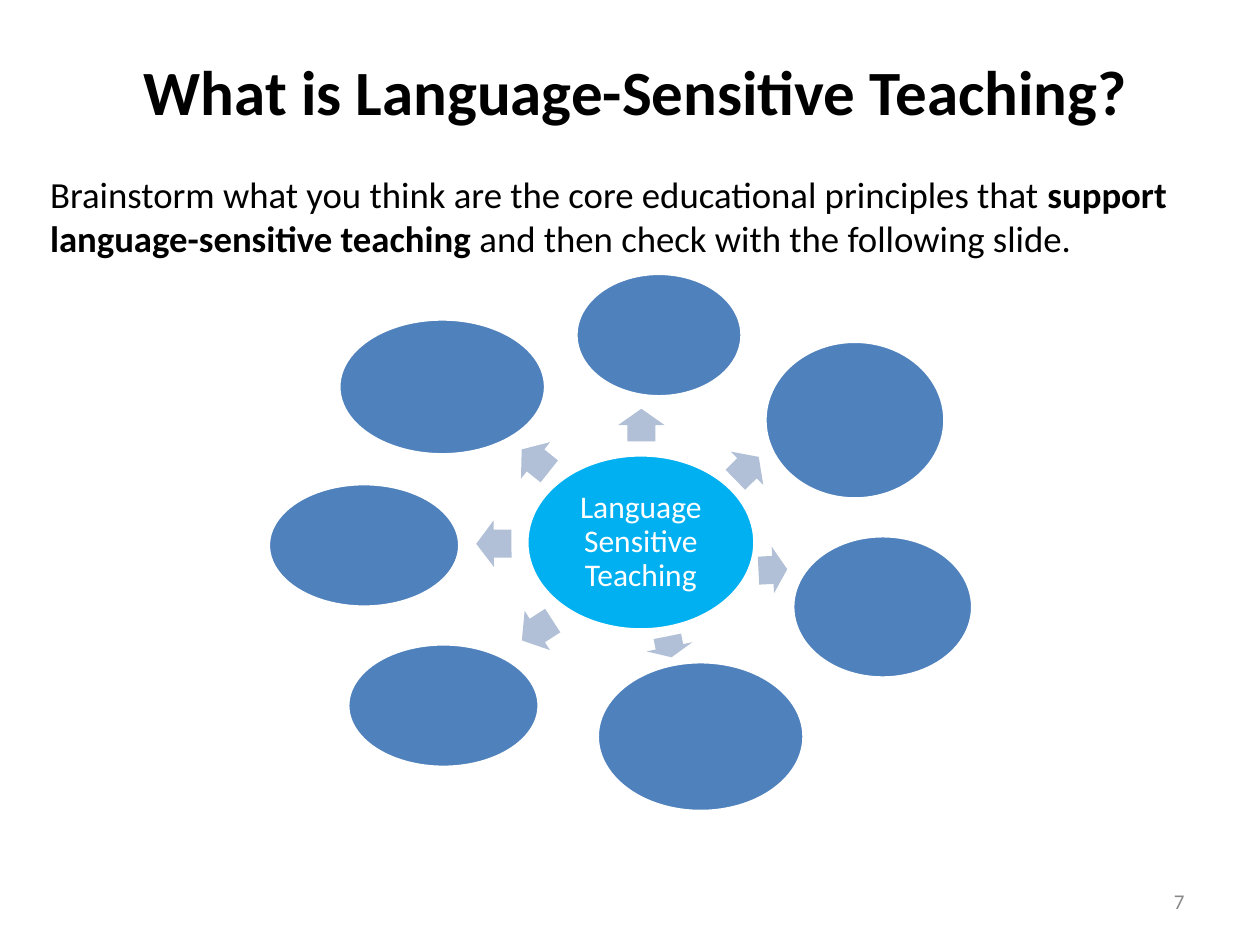
from pptx import Presentation
from pptx.dml.color import RGBColor
from pptx.enum.shapes import MSO_SHAPE as Shape
from pptx.enum.text import MSO_ANCHOR as Anchor, PP_ALIGN as Align
from pptx.util import Cm, Pt

BLACK = RGBColor(0x00, 0x00, 0x00)
WHITE = RGBColor(0xFF, 0xFF, 0xFF)
GREY = RGBColor(0x88, 0x88, 0x88)
CYAN = RGBColor(0x00, 0xB0, 0xF0)
BLUE = RGBColor(0x4F, 0x81, 0xBD)
PALE_BLUE = RGBColor(0xB1, 0xC0, 0xD7)

ARROW_HEIGHT = 0.94

# Each idea: ellipse (left, top, width, height), arrow (left, top, width), angle
IDEAS = [
    ((11.61, 5.51, 3.35, 2.49), (12.6, 8.1, 0.66), 270),
    ((15.42, 6.88, 3.63, 3.18), (14.73, 8.97, 0.66), 315.7),
    ((15.98, 10.8, 3.63, 2.87), (15.29, 11.02, 0.58), 357.1),
    ((12.04, 13.34, 4.17, 3.02), (13.28, 12.57, 0.43), 78.7),
    ((7.01, 12.98, 3.86, 2.49), (10.46, 12.24, 0.74), 147.2),
    ((5.41, 9.75, 3.86, 2.49), (9.6, 10.49, 0.71), 179.5),
    ((6.83, 6.43, 4.17, 2.74), (10.44, 8.81, 0.71), 218.5),
]


class SlideBuilder:
    font = "Calibri"

    def __init__(self, slide):
        self.s = slide

    def label(self, sp, runs, size, color, align=Align.LEFT, anchor=Anchor.TOP,
              margins=(0.25, 0.13), spacing=1.0):
        """Fill a shape with one paragraph of (text, bold) runs."""
        tf = sp.text_frame
        mx, my = (Cm(m) for m in margins)
        frame = {"word_wrap": True, "vertical_anchor": anchor,
                 "margin_left": mx, "margin_right": mx,
                 "margin_top": my, "margin_bottom": my}
        for name, value in frame.items():
            setattr(tf, name, value)
        p = tf.paragraphs[0]
        p.alignment, p.line_spacing = align, spacing
        for text, bold in runs:
            r = p.add_run()
            r.text = text
            for name, value in {"name": self.font, "size": Pt(size), "bold": bold}.items():
                setattr(r.font, name, value)
            r.font.color.rgb = color

    def text(self, box, runs, size, color, **style):
        sp = self.s.shapes.add_textbox(*map(Cm, box))
        self.label(sp, runs, size, color, **style)

    def shape(self, kind, box, fill):
        sp = self.s.shapes.add_shape(kind, *map(Cm, box))
        sp.shadow.inherit = False
        sp.fill.solid()
        sp.fill.fore_color.rgb = fill
        return sp

    def ellipse(self, box, fill):
        sp = self.shape(Shape.OVAL, box, fill)
        sp.line.color.rgb = WHITE
        sp.line.width = Pt(2)
        return sp

    def arrow(self, place, angle):
        sp = self.shape(Shape.RIGHT_ARROW, (*place, ARROW_HEIGHT), PALE_BLUE)
        sp.line.fill.background()
        sp.adjustments[0], sp.adjustments[1] = 0.6, 0.5
        sp.rotation = angle


def main():
    prs = Presentation()
    prs.slide_width, prs.slide_height = Cm(25.4), Cm(19.05)
    b = SlideBuilder(prs.slides.add_slide(prs.slide_layouts[6]))

    # Title and task
    b.text((0.71, 0.33, 24.21, 3), [("What is Language-Sensitive Teaching?", True)],
           36, BLACK, align=Align.CENTER, anchor=Anchor.MIDDLE)
    b.text((0.76, 3.33, 24.13, 13.36),
           [("Brainstorm what you think are the core educational principles that ", False),
            ("support language-sensitive teaching ", True),
            ("and then check with the following slide.", False)], 21, BLACK)

    # Central concept
    hub = b.ellipse((10.62, 9.17, 4.6, 3.53), CYAN)
    b.label(hub, [("Language Sensitive Teaching", False)], 18, WHITE,
            align=Align.CENTER, anchor=Anchor.MIDDLE, margins=(0.1, 0.1), spacing=0.9)

    # Empty ideas around it
    for oval, arrow, angle in IDEAS:
        b.arrow(arrow, angle)
        b.ellipse(oval, BLUE)

    # Slide number
    b.text((18.21, 17.65, 5.92, 1.02), [("7", False)], 12, GREY,
           align=Align.RIGHT, anchor=Anchor.MIDDLE)

    prs.save("out.pptx")


if __name__ == "__main__":
    main()
